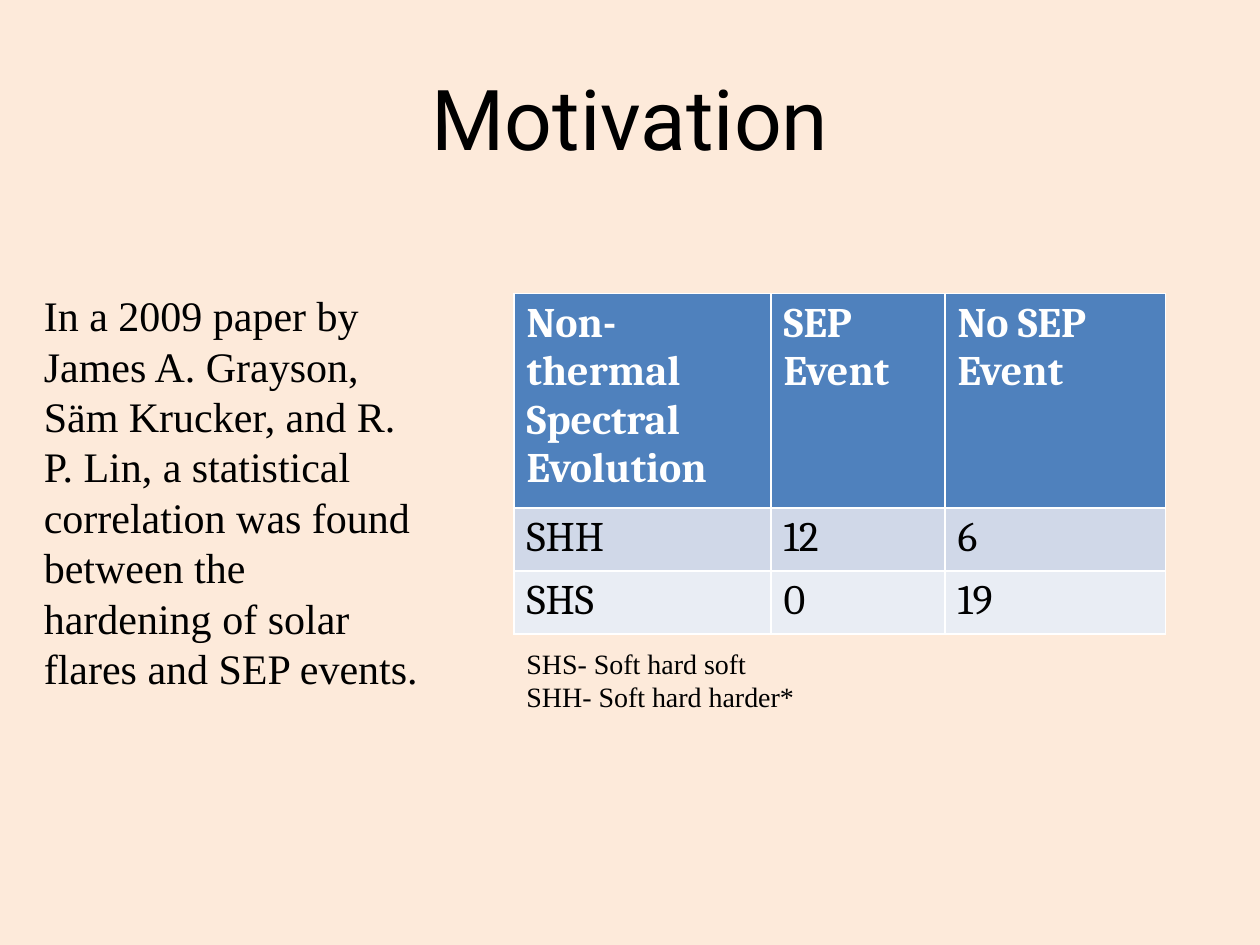
from pptx import Presentation
from pptx.dml.color import RGBColor
from pptx.enum.text import MSO_ANCHOR, PP_ALIGN
from pptx.util import Inches, Pt

COLORS = {
    "background": "FDEADA",
    "text": "000000",
    "header_text": "FFFFFF",
    "header": "4F81BD",
    "odd_row": "D0D8E8",
    "even_row": "E9EDF4",
}


def format_text(tf, font, size, color="text", bold=False):
    for p in tf.paragraphs:
        for r in p.runs:
            r.font.name = font
            r.font.size = Pt(size)
            r.font.bold = bold
            r.font.color.rgb = RGBColor.from_string(COLORS[color])


def add_text(s, text, left, top, width, height, size):
    box = s.shapes.add_textbox(Inches(left), Inches(top), Inches(width), Inches(height))
    tf = box.text_frame
    tf.word_wrap = True
    tf.text = text
    format_text(tf, "Times New Roman", size)


prs = Presentation()
prs.slide_width, prs.slide_height = Inches(10), Inches(7.5)
s = prs.slides.add_slide(prs.slide_layouts[5])
s.background.fill.solid()
s.background.fill.fore_color.rgb = RGBColor.from_string(COLORS["background"])

# Title
title = s.shapes.title
title.left, title.top = Inches(0.5), Inches(0.3)
title.width, title.height = Inches(9), Inches(1.25)
tf = title.text_frame
tf.text = "Motivation"
tf.vertical_anchor = MSO_ANCHOR.MIDDLE
tf.paragraphs[0].alignment = PP_ALIGN.CENTER
format_text(tf, "Roboto", 48)

# Introduction
add_text(
    s,
    "In a 2009 paper by James A. Grayson, Säm Krucker, and R. P. Lin, "
    "a statistical correlation was found between the hardening of solar "
    "flares and SEP events.",
    0.25, 2.25, 3.17, 3.74, 24,
)

# Event counts; the default table style supplies the white borders
rows = [
    ("Non-thermal Spectral Evolution", "SEP Event", "No SEP Event"),
    ("SHH", "12", "6"),
    ("SHS", "0", "19"),
]
row_fills = ["header", "odd_row", "even_row"]
table = s.shapes.add_table(
    3, 3, Inches(4.08), Inches(2.33), Inches(5.17), Inches(2.7)
).table
for column, width in zip(table.columns, (2.04, 1.38, 1.75)):
    column.width = Inches(width)
for row, height in zip(table.rows, (1.7, 0.5, 0.5)):
    row.height = Inches(height)
for i, values in enumerate(rows):
    is_header = i == 0
    for j, value in enumerate(values):
        cell = table.cell(i, j)
        cell.text = value
        cell.fill.solid()
        cell.fill.fore_color.rgb = RGBColor.from_string(COLORS[row_fills[i]])
        format_text(cell.text_frame, "Cambria", 24,
                    "header_text" if is_header else "text", is_header)

# Abbreviations
add_text(s, "SHS- Soft hard soft\nSHH- Soft hard harder*", 4.08, 5.08, 3.75, 0.64, 16)

prs.save("out.pptx")
